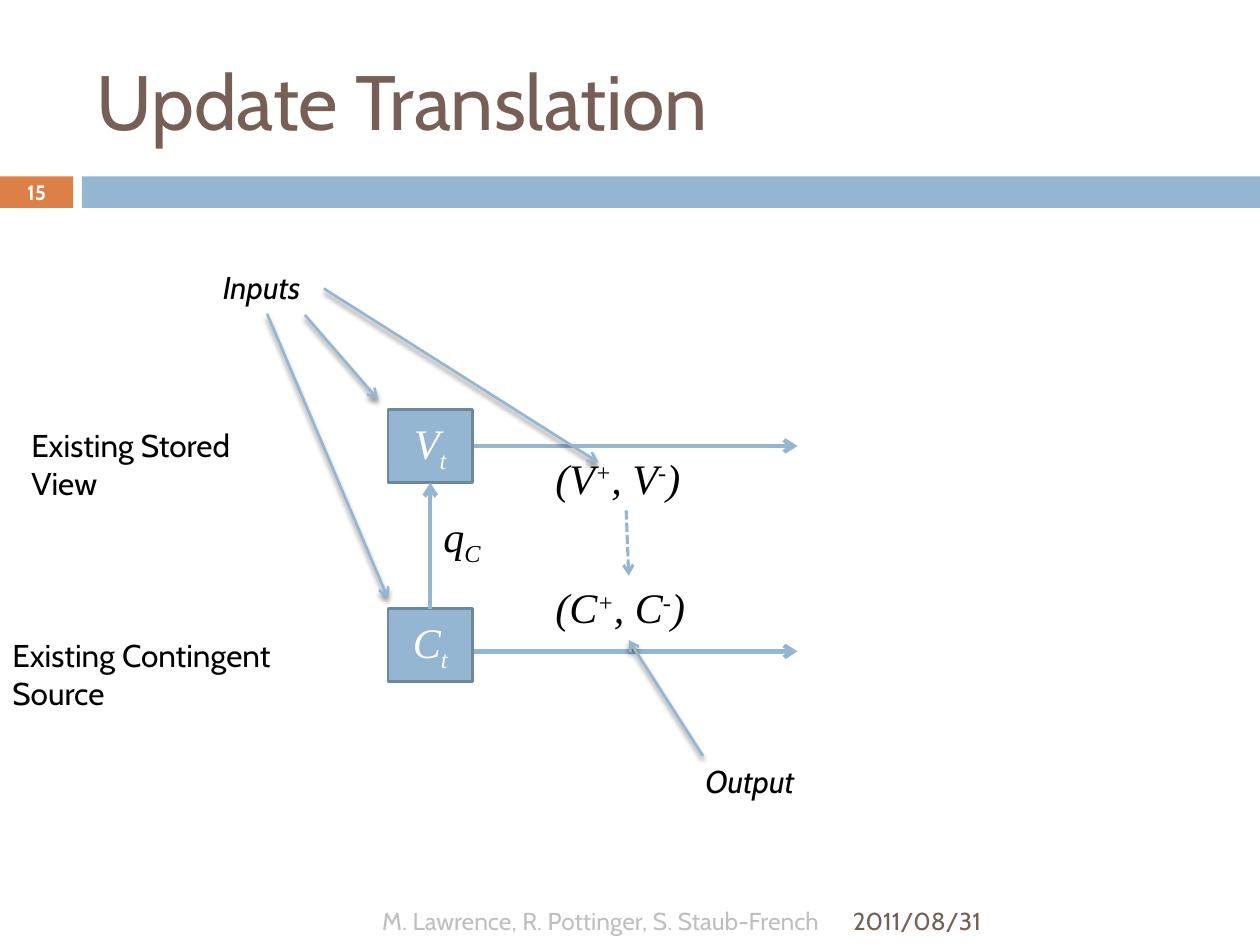
from lxml import etree
from pptx import Presentation
from pptx import util as u
from pptx.dml.color import RGBColor
from pptx.enum import dml, shapes, text
from pptx.oxml import parse_xml
from pptx.oxml.ns import nsdecls, qn

BLUE = RGBColor(0x94, 0xB6, 0xD2)
EDGE = RGBColor(0x6D, 0x87, 0x9B)
ORANGE = RGBColor(0xDD, 0x80, 0x47)
BROWN = RGBColor(0x77, 0x5F, 0x55)
GRAY = RGBColor(0xBF, 0xBF, 0xBF)
BLACK = RGBColor(0, 0, 0)
WHITE = RGBColor(0xFF, 0xFF, 0xFF)
SANS, SERIF = "Cabin", "Times New Roman"
LEFT, CENTER, RIGHT = text.PP_ALIGN.LEFT, text.PP_ALIGN.CENTER, text.PP_ALIGN.RIGHT
TOP, MIDDLE = text.MSO_ANCHOR.TOP, text.MSO_ANCHOR.MIDDLE
SUB, SUPER = -25, 30

SHADOW = (
    f'<a:effectLst {nsdecls("a")}>'
    '<a:outerShdw blurRad="38100" dist="30480" dir="5400000" rotWithShape="0">'
    '<a:srgbClr val="000000"><a:alpha val="45000"/></a:srgbClr>'
    "</a:outerShdw></a:effectLst>"
)


def write_text(shape, content, size=18, font=SANS, color=BLACK, bold=False,
               italic=False, align=LEFT, anchor=TOP, wrap=True):
    """Fill a shape with a string or a list of (string, baseline percent) runs."""
    frame = shape.text_frame
    frame.word_wrap = wrap
    frame.vertical_anchor = anchor
    paragraph = frame.paragraphs[0]
    paragraph.alignment = align
    runs = [(content, 0)] if isinstance(content, str) else content
    for string, baseline in runs:
        run = paragraph.add_run()
        run.text = string
        run.font.size = u.Pt(size)
        run.font.name = font
        run.font.color.rgb = color
        run.font.bold = bold
        run.font.italic = italic
        if baseline:
            run.font._element.set("baseline", str(baseline * 1000))


def add_text(slide, left, top, width, height, content, **style):
    box = slide.shapes.add_textbox(*map(u.Inches, (left, top, width, height)))
    write_text(box, content, **style)


def add_rectangle(slide, left, top, width, height, fill, edge=None):
    shape = slide.shapes.add_shape(
        shapes.MSO_SHAPE.RECTANGLE, *map(u.Inches, (left, top, width, height)))
    shape.shadow.inherit = False
    shape.fill.solid()
    shape.fill.fore_color.rgb = fill
    if edge is None:
        shape.line.fill.background()
    else:
        shape.line.color.rgb = edge
        shape.line.width = u.Pt(1.5)
    return shape


def add_arrow(slide, start, end, width, dashed=False, shadow=False):
    arrow = slide.shapes.add_connector(
        shapes.MSO_CONNECTOR.STRAIGHT, *map(u.Inches, (*start, *end)))
    arrow.line.color.rgb = BLUE
    arrow.line.width = u.Pt(width)
    if dashed:
        arrow.line.dash_style = dml.MSO_LINE.SQUARE_DOT
    properties = arrow._element.spPr
    etree.SubElement(properties.find(qn("a:ln")), qn("a:tailEnd"), type="arrow")
    if shadow:
        properties.append(parse_xml(SHADOW))
    else:
        etree.SubElement(properties, qn("a:effectLst"))


def add_header(slide, left, top, width, title, number):
    band_top, band_height, number_width, band_left = top + 1.4, 0.25, 0.58, 0.65
    add_rectangle(slide, left, band_top, number_width, band_height, ORANGE)
    add_rectangle(slide, left + band_left, band_top, width - band_left, band_height, BLUE)
    add_text(slide, left + 0.67, top + 0.25, 8.92, 1.08, title,
             size=44, color=BROWN, anchor=MIDDLE)
    add_text(slide, left, band_top - 0.01, number_width, 0.27, number,
             size=11.9, color=WHITE, bold=True, align=CENTER, anchor=MIDDLE)


def add_diagram(slide, left, top):
    def at(x, y):
        return left + x, top + y

    math_style = dict(size=24, font=SERIF, italic=True)
    node_left, node_width, node_height = 3.08, 0.67, 0.58
    node_middle = node_left + node_width / 2
    view_top, source_top = 1.25, 2.83

    # Timelines: each state, its change below or above the line
    for letter, node_top, line_y, change_top in (
            ("V", view_top, 1.54, 1.54), ("C", source_top, 3.17, 2.57)):
        add_arrow(slide, at(node_left + node_width, line_y), at(6.33, line_y), 2.5)
        node = add_rectangle(slide, *at(node_left, node_top),
                             node_width, node_height, BLUE, EDGE)
        write_text(node, [(letter, 0), ("t", SUB)], color=WHITE,
                   align=CENTER, anchor=MIDDLE, **math_style)
        change = [("(" + letter, 0), ("+", SUPER), (", " + letter, 0),
                  ("-", SUPER), (")", 0)]
        add_text(slide, *at(4.31, change_top), 1.35, 0.5, change,
                 wrap=False, **math_style)

    add_arrow(slide, at(4.97, 2.05), at(4.99, 2.57), 1.75, dashed=True)
    add_arrow(slide, at(node_middle, source_top),
              at(node_middle, view_top + node_height), 2.5)
    add_text(slide, *at(3.42, 2), 0.59, 0.5, [("q", 0), ("C", SUB)],
             wrap=False, **math_style)

    # Callouts
    for start, end in (((2.12, 0.49), (3.08, 2.75)), ((2.42, 0.5), (3, 1.17)),
                       ((2.57, 0.29), (4.75, 1.67)), ((5.58, 4), (4.99, 3.08))):
        add_arrow(slide, at(*start), at(*end), 1.5, shadow=True)
    for x, y, width, label in ((1.67, 0.08, 0.9, "Inputs"), (5.5, 4, 0.99, "Output")):
        add_text(slide, *at(x, y), width, 0.4, label, italic=True, wrap=False)
    for x, y, width, label in ((0.15, 1.33, 2.28, "Existing Stored View"),
                               (0, 3, 2.93, "Existing Contingent Source")):
        add_text(slide, *at(x, y), width, 0.4, label)


def add_footer(slide, left, top, authors, date):
    add_text(slide, left, top, 5.93, 0.4, authors,
             size=14, color=GRAY, align=RIGHT, anchor=MIDDLE)
    add_text(slide, left + 6, top, 2.92, 0.4, date,
             size=14, color=BROWN, anchor=MIDDLE)


def main():
    presentation = Presentation()
    presentation.slide_width, presentation.slide_height = u.Inches(10), u.Inches(7.5)
    slide = presentation.slides.add_slide(presentation.slide_layouts[6])
    add_header(slide, 0, 0, 10, "Update Translation", "15")
    add_diagram(slide, 0, 2)
    add_footer(slide, 0.67, 7.11, "M. Lawrence, R. Pottinger, S. Staub-French", "2011/08/31")
    presentation.save("out.pptx")


if __name__ == "__main__":
    main()
